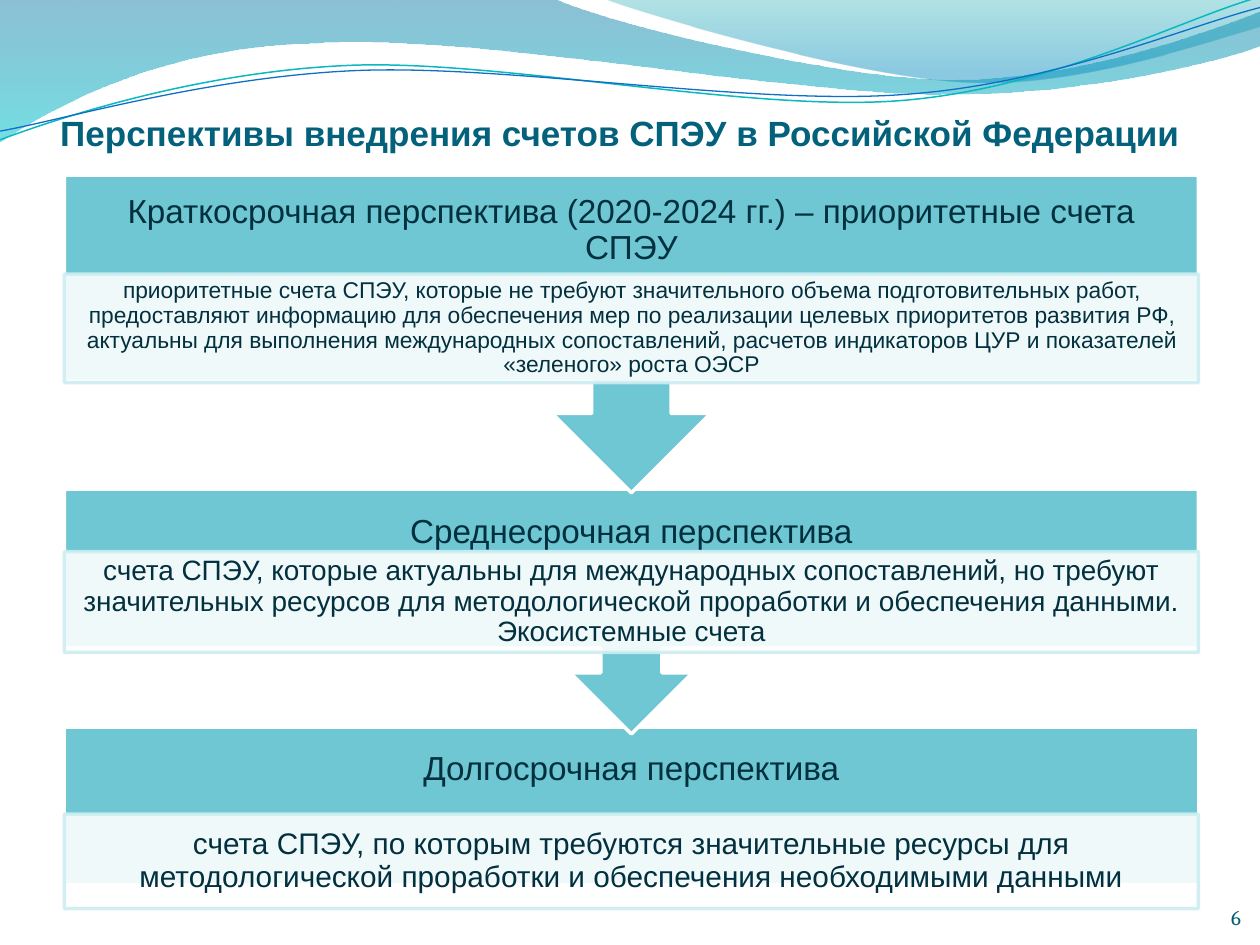
import pptx
import pptx.dml.color
import pptx.enum.shapes
import pptx.enum.text
import pptx.oxml.ns
import pptx.util

Pt = pptx.util.Pt
MSO_SHAPE = pptx.enum.shapes.MSO_SHAPE
ALIGN = pptx.enum.text.PP_ALIGN
ANCHOR = pptx.enum.text.MSO_ANCHOR
qn = pptx.oxml.ns.qn


def set_color(color, value, opacity=100):
    color.rgb = pptx.dml.color.RGBColor.from_string(value)
    if opacity < 100:
        element = color._xFill.find(qn("a:srgbClr"))
        alpha = element.makeelement(qn("a:alpha"), {"val": str(opacity * 1000)})
        element.append(alpha)


def add_text(text, box, size, color="02303E", font="Arial", bold=False,
             align=ALIGN.CENTER, anchor=ANCHOR.MIDDLE, inset=(0, 0), spacing=None):
    shape = slide.shapes.add_textbox(*map(Pt, box))
    frame = shape.text_frame
    frame.word_wrap = True
    frame.vertical_anchor = anchor
    frame.margin_left = frame.margin_right = Pt(inset[0])
    frame.margin_top = frame.margin_bottom = Pt(inset[1])
    paragraph = frame.paragraphs[0]
    paragraph.alignment = align
    paragraph.line_spacing = spacing
    run = paragraph.add_run()
    run.text = text
    run.font.size = Pt(size)
    run.font.name = font
    run.font.bold = bold
    set_color(run.font.color, color)


presentation = pptx.Presentation()
presentation.slide_width = Pt(720)
presentation.slide_height = Pt(540)
slide = presentation.slides.add_slide(presentation.slide_layouts[6])

waves = [
    ([(0, 0), (316.8, -0.7),
      (342.7, 12.2, 478.1, 45.4, 545.8, 45.4), (614.2, 45.4, 689.8, 18.7, 720, 6.5),
      (720.7, 25.9), (707.8, 31.7, 626.4, 54.7, 537.1, 54),
      (447.8, 54, 275, 20.2, 185, 24.5), (92.9, 25.9, 33.1, 59.8, -0.7, 81.4)],
     [(0, "0074A1", 45), (1, "00C6CF", 55)], None),
    ([(344.9, -0.7), (366.5, 7.9, 491, 44.6, 553.7, 46.8),
      (616.3, 49.7, 691.9, 23, 720, 15.1), (720, 0)],
     [(0, "00A1A9", 30), (0.8, "008BBF", 45)], None),
    ([(0, 79.9), (34.6, 67, 113.8, 41, 199.4, 37.4),
      (284.4, 33.8, 427, 64.1, 513.4, 57.6), (599.8, 51.1, 675.4, 10.8, 718.6, -1.4)],
     None, ("0AB8BF", 0.85)),
    ([(0, 74.9), (33.8, 69.1, 118.1, 43.9, 203.8, 40.3),
      (290.2, 36.7, 429.8, 60.5, 516.2, 54), (601.9, 48.2, 677.5, 15.1, 720, 4.3)],
     None, ("0F6FC6", 0.75)),
]
units = 100
for segments, stops, line in waves:
    points = [(segment[index] * units, segment[index + 1] * units)
              for segment in segments for index in range(0, len(segment), 2)]
    builder = slide.shapes.build_freeform(*points[0], scale=Pt(1) / units)
    builder.add_line_segments(points[1:], close=stops is not None)
    wave = builder.convert_to_shape()
    vertices = iter(list(wave._element.iter(qn("a:lnTo"))))
    for segment in segments[1:]:
        vertex = next(vertices)
        if len(segment) == 6:
            curve = vertex.makeelement(qn("a:cubicBezTo"), {})
            vertex.addprevious(curve)
            for control in (vertex, next(vertices), next(vertices)):
                curve.append(control[0])
                control.getparent().remove(control)
    wave.shadow.inherit = False
    if stops:
        wave.fill.gradient()
        wave.fill.gradient_angle = 270
        for stop, (position, color, opacity) in zip(wave.fill.gradient_stops, stops):
            stop.position = position
            set_color(stop.color, color, opacity)
        wave.line.fill.background()
    else:
        wave.fill.background()
        set_color(wave.line.color, line[0])
        wave.line.width = Pt(line[1])

left, width = 36.8, 648
stages = [
    (MSO_SHAPE.RECTANGLE, 415.5, 90, 48.5, "Долгосрочная перспектива",
     465.2, 54, 17, 9.4,
     "счета СПЭУ, по которым требуются значительные ресурсы для методологической "
     "проработки и обеспечения необходимыми данными"),
    (MSO_SHAPE.UP_ARROW_CALLOUT, 279.5, 139.9, 49.5, "Среднесрочная перспектива",
     315.3, 57.6, 16, 8.6,
     "счета СПЭУ, которые актуальны для международных сопоставлений, но требуют "
     "значительных ресурсов для методологической проработки и обеспечения данными. "
     "Экосистемные счета"),
    (MSO_SHAPE.UP_ARROW_CALLOUT, 100, 181.6, 63.4,
     "Краткосрочная перспектива (2020-2024 гг.) – приоритетные счета СПЭУ",
     156.6, 62, 13, 7.2,
     "приоритетные счета СПЭУ, которые не требуют значительного объема "
     "подготовительных работ, предоставляют информацию для обеспечения мер по "
     "реализации целевых приоритетов развития РФ, актуальны для выполнения "
     "международных сопоставлений, расчетов индикаторов ЦУР и показателей "
     "«зеленого» роста ОЭСР"),
]
for (kind, top, height, heading_height, heading,
     detail_top, detail_height, detail_size, detail_inset, detail) in stages:
    heading_box = (left, top, width, heading_height)
    detail_box = (left, detail_top, width, detail_height)
    panels = [
        (kind, (left, top, width, height), "6FC7D3", "FFFFFF", 100,
         heading, heading_box, 19, (10.6, 10.6)),
        (MSO_SHAPE.RECTANGLE, detail_box, "FFFFFF", "CCEEF1", 90,
         detail, detail_box, detail_size, (detail_inset, 1.5)),
    ]
    for preset, box, fill, outline, opacity, text, text_box, size, inset in panels:
        shape = slide.shapes.add_shape(preset, *map(Pt, box))
        shape.shadow.inherit = False
        if preset == MSO_SHAPE.UP_ARROW_CALLOUT:
            shape.rotation = 180
        shape.fill.solid()
        set_color(shape.fill.fore_color, fill, opacity)
        set_color(shape.line.color, outline, opacity)
        shape.line.width = Pt(2)
        add_text(text, text_box, size, inset=inset, spacing=0.9)

add_text("Перспективы внедрения счетов СПЭУ в Российской Федерации",
         (21, 60.1, 666.7, 31.7), 20, color="04617B", bold=True,
         anchor=ANCHOR.TOP, inset=(7.2, 3.6))
add_text("6", (649.4, 502.6, 59.8, 28.8), 12, color="045D75", font="Cambria",
         align=ALIGN.RIGHT, anchor=ANCHOR.BOTTOM)

presentation.save("out.pptx")
